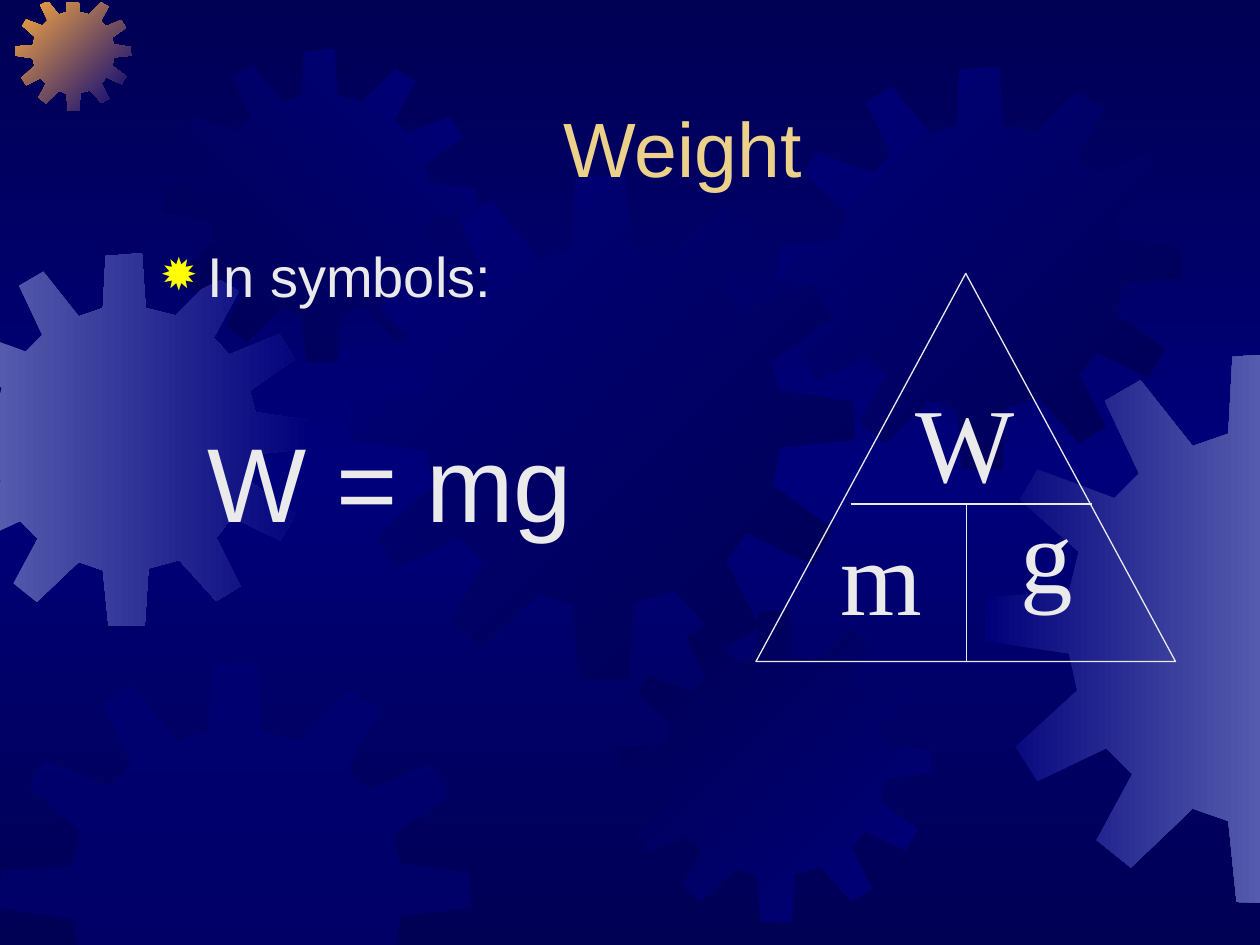
from copy import deepcopy

from lxml.etree import SubElement
from pptx import Presentation
from pptx.dml.color import RGBColor
from pptx.enum.shapes import MSO_CONNECTOR, MSO_SHAPE
from pptx.enum.text import MSO_ANCHOR, MSO_AUTO_SIZE, PP_ALIGN
from pptx.oxml.ns import qn
from pptx.util import Inches, Pt

NAVY, BLUE, LILAC, ORANGE = "000054", "00007A", "555BAD", "FCAB40"
PALE, GOLD, YELLOW = "EAEAEA", "EBD189", "FFFF00"

# One gear outline, drawn in a square of 401 units
GEAR_UNITS = 401
GEAR = [
    (255, 67), (223, 59), (219, 0), (180, 3), (177, 59), (151, 68),
    (113, 20), (87, 35), (112, 88), (94, 106), (38, 85), (25, 107),
    (68, 145), (61, 174), (1, 178), (0, 210), (61, 219), (67, 246),
    (22, 287), (38, 312), (88, 288), (107, 307), (81, 355), (106, 375),
    (151, 332), (177, 341), (183, 400), (222, 401), (226, 339), (259, 330),
    (299, 374), (325, 358), (299, 306), (316, 284), (368, 309), (384, 281),
    (336, 246), (342, 216), (401, 210), (400, 180), (341, 171), (335, 148),
    (383, 114), (367, 87), (313, 109), (296, 91), (323, 41), (297, 25),
]
# left, top, size, gradient colours, clockwise angle (None: half-transparent)
GEARS = [
    (-0.49, 2.01, 2.96, (LILAC, BLUE), 0),
    (0.12, -0.04, 0.92, (ORANGE, BLUE), 45),
    (1.30, 0.39, 2.48, (NAVY, BLUE), 315),
    (2.77, 1.39, 4.01, (BLUE, NAVY), 45),
    (0, 5.25, 3.74, (BLUE,), None),
    (4.91, 4.84, 2.48, (NAVY, BLUE), 45),
    (6.18, 0.53, 3.20, (BLUE, NAVY), 45),
    (7.82, 2.80, 4.37, (BLUE, LILAC), 0),
]
# axis, limit, side to keep
EDGES = [(0, -0.01, 1), (0, 10.01, -1), (1, 0.02, 1), (1, 7.54, -1)]

TRIANGLE = (6, 2.17, 3.33, 3.08)
DIVIDERS = [(6.75, 4, 8.67, 4), (7.67, 4, 7.67, 5.25)]
LETTERS = [  # letter, left, top, width, wrap
    ("W", 7.17, 2.95, 0.99, False),
    ("m", 6.57, 4, 0.85, False),
    ("g", 8, 3.83, 0.62, True),
]


def color(value):
    return RGBColor.from_string(value)


def inches(*values):
    return [Inches(value) for value in values]


def set_gradient(fill, colors, angle):
    fill.gradient()
    fill.gradient_angle = -angle % 360
    for stop, value, position in zip(fill.gradient_stops, colors, (0, 1)):
        stop.color.rgb = color(value)
        stop.position = position


def clip(points, axis, limit, side):
    """Cut a polygon along one straight edge."""
    kept = []
    for start, end in zip(points[-1:] + points[:-1], points):
        start_in, end_in = (side * (p[axis] - limit) >= 0 for p in (start, end))
        if start_in != end_in:
            share = (limit - start[axis]) / (end[axis] - start[axis])
            kept.append(tuple(a + share * (b - a) for a, b in zip(start, end)))
        if end_in:
            kept.append(end)
    return kept


def add_gear(page, left, top, size, colors, angle):
    unit = size / GEAR_UNITS
    points = [(left + x * unit, top + y * unit) for x, y in GEAR]
    for edge in EDGES:
        points = clip(points, *edge)
    first, *rest = [inches(*point) for point in points]
    builder = page.shapes.build_freeform(*first)
    builder.add_line_segments(rest, close=True)
    gear = builder.convert_to_shape()
    gear.shadow.inherit = False
    gear.line.fill.background()
    if angle is None:
        gear.fill.solid()
        gear.fill.fore_color.rgb = color(colors[0])
        tint = gear.element.spPr.find(".//" + qn("a:srgbClr"))
        SubElement(tint, qn("a:alpha"), val="50000")
    else:
        set_gradient(gear.fill, colors, angle)


def place(shape, left, top, width, height):
    shape.left, shape.top, shape.width, shape.height = inches(left, top, width, height)


def add_span(para, text, size, font, value):
    span = para.add_run()
    span.text = text
    span.font.size = Pt(size)
    span.font.name = font
    span.font.color.rgb = color(value)


def set_bullet(para, indent, character=None):
    properties = para._p.get_or_add_pPr()
    properties.set("marL", str(Inches(0.38)))
    properties.set("indent", str(Inches(indent)))
    if character is None:
        SubElement(properties, qn("a:buNone"))
        return
    tint = SubElement(properties, qn("a:buClr"))
    SubElement(tint, qn("a:srgbClr"), val=YELLOW)
    SubElement(properties, qn("a:buSzPct"), val="80000")
    SubElement(properties, qn("a:buChar"), char=character)


def style_line(shape):
    shape.line.color.rgb = color(PALE)
    shape.line.width = Pt(0.75)


deck = Presentation()
deck.slide_width, deck.slide_height = inches(10, 7.5)
page = deck.slides.add_slide(deck.slide_layouts[1])

set_gradient(page.background.fill, (NAVY, NAVY), 90)
first_stop = page.element.find(".//" + qn("a:gs"))
middle_stop = deepcopy(first_stop)
middle_stop.set("pos", "50000")
middle_stop.find(qn("a:srgbClr")).set("val", BLUE)
first_stop.addnext(middle_stop)

for gear in GEARS:
    add_gear(page, *gear)

title, body = page.placeholders
for holder in (title, body):
    holder.element.getparent().append(holder.element)  # in front of the gears
    holder.text_frame.auto_size = MSO_AUTO_SIZE.NONE

place(title, 1.17, 0.33, 8.5, 1.25)
title.text_frame.vertical_anchor = MSO_ANCHOR.BOTTOM
para = title.text_frame.paragraphs[0]
para.alignment = PP_ALIGN.CENTER
add_span(para, "Weight", 44, "Arial", GOLD)

place(body, 1.17, 1.83, 3.83, 2.83)
body.text_frame.margin_top = Inches(0.09)
para = body.text_frame.paragraphs[0]
para.space_before = Pt(0)
set_bullet(para, -0.38, "✹")
add_span(para, "In symbols:", 32, "Arial", PALE)
para = body.text_frame.add_paragraph()
para.space_before = Pt(62)
set_bullet(para, 0)
add_span(para, "W = mg", 60, "Arial", PALE)

for letter, left, top, width, wrap in LETTERS:
    box = page.shapes.add_textbox(*inches(left, top, width, 1.1))
    box.text_frame.word_wrap = wrap
    box.text_frame.auto_size = MSO_AUTO_SIZE.SHAPE_TO_FIT_TEXT
    add_span(box.text_frame.paragraphs[0], letter, 60, "Times New Roman", PALE)

triangle = page.shapes.add_shape(MSO_SHAPE.ISOSCELES_TRIANGLE, *inches(*TRIANGLE))
triangle.shadow.inherit = False
triangle.fill.background()
style_line(triangle)
for ends in DIVIDERS:
    divider = page.shapes.add_connector(MSO_CONNECTOR.STRAIGHT, *inches(*ends))
    style_line(divider)
    SubElement(divider.element.spPr, qn("a:effectLst"))

deck.save("out.pptx")
